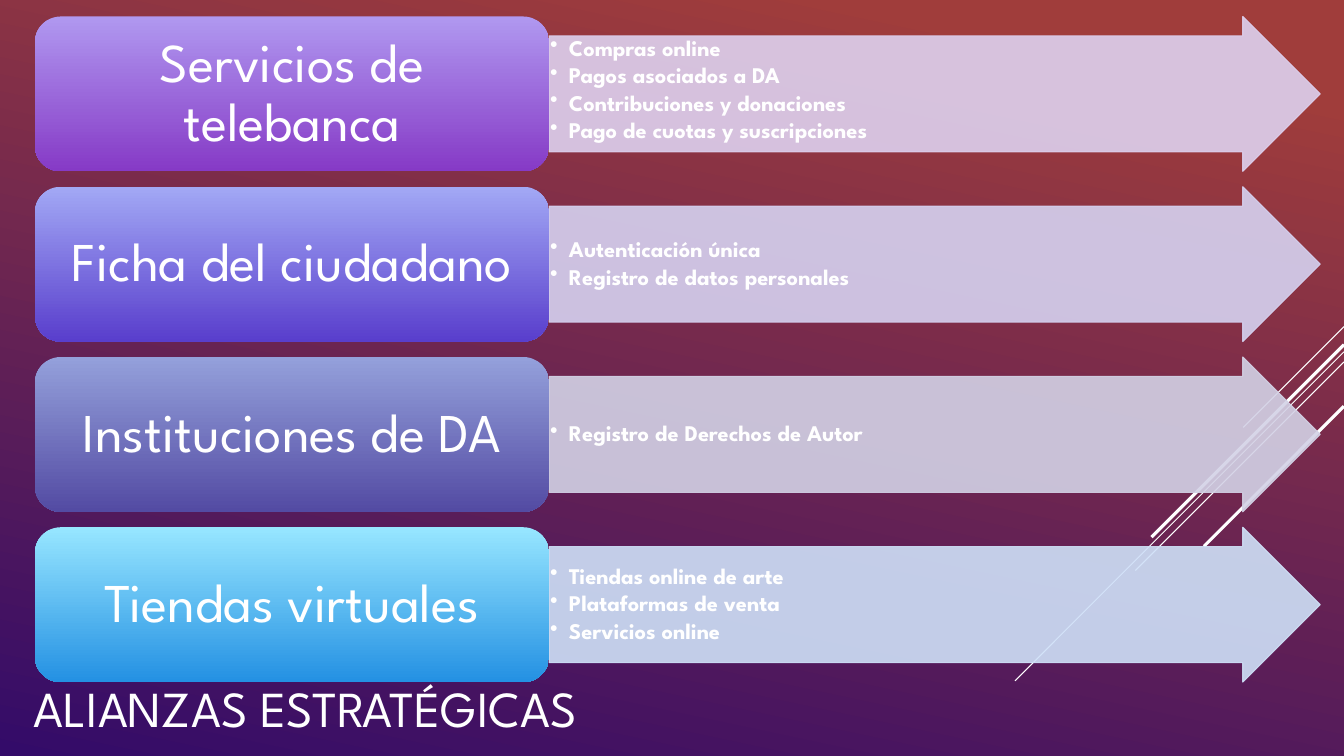
from dataclasses import dataclass

from lxml.etree import SubElement as Sub
from pptx import Presentation
from pptx.dml.color import RGBColor as Rgb
from pptx.enum.shapes import MSO_CONNECTOR as Conn, MSO_SHAPE as Kind
from pptx.enum.text import MSO_ANCHOR as Anchor, MSO_AUTO_SIZE as Fit, PP_ALIGN as Align
from pptx.oxml.ns import qn
from pptx.util import Pt


@dataclass(frozen=True)
class Theme:
    font: str = "League Spartan"
    text: str = "FFFFFF"
    back: tuple = ("A03D3B", "330B69")
    title: int = 36
    label: int = 39
    item: int = 16
    alpha: int = 90


@dataclass(frozen=True)
class Row:
    label: str
    items: tuple
    shades: tuple
    tint: str


THEME = Theme()
WIDE, HIGH = 960, 540
ROWS = (
    Row("Servicios de telebanca",
        ("Compras online", "Pagos asociados a DA", "Contribuciones y donaciones",
         "Pago de cuotas y suscripciones"),
        ("B098F0", "863AC6"), "DED1EF"),
    Row("Ficha del ciudadano",
        ("Autenticación única", "Registro de datos personales"),
        ("A2A8F5", "593ECC"), "D6D2F1"),
    Row("Instituciones de DA", ("Registro de Derechos de Autor",),
        ("94A0DB", "534BA3"), "D3D2E6"),
    Row("Tiendas virtuales",
        ("Tiendas online de arte", "Plataformas de venta", "Servicios online"),
        ("97E6FF", "2491E3"), "CFE1F8"),
)
# Start height on the right edge, run to the lower left, line width
RAYS = ((233.3, 72, 0.75), (251.3, 235, 0.75), (258.5, 149, 0.75),
        (246.2, 137.5, 2.25), (290.2, 100, 2.25))


def write(frame, *lines, size, bold=False, align=Align.LEFT, anchor=Anchor.MIDDLE,
          inset=(7.2, 3.6), lead=0.9, after=0, hang=0):
    """Fill a text frame, one paragraph per line; hang adds bullets."""
    frame.word_wrap = True
    frame.auto_size = Fit.NONE
    frame.vertical_anchor = anchor
    frame.margin_left = frame.margin_right = Pt(inset[0])
    frame.margin_top = frame.margin_bottom = Pt(inset[1])
    for i, line in enumerate(lines):
        para = frame.add_paragraph() if i else frame.paragraphs[0]
        para.alignment = align
        para.line_spacing = lead
        para.space_after = Pt(after)
        run = para.add_run()
        run.text = line
        font = run.font
        font.name, font.size, font.bold = THEME.font, Pt(size), bold
        font.color.rgb = Rgb.from_string(THEME.text)
        if hang:
            props = para._p.get_or_add_pPr()
            props.set("marL", str(Pt(hang)))
            props.set("indent", str(-Pt(hang)))
            Sub(props, qn("a:buChar"), char="•")


def shade(fill, colors, angle=270, start=0):
    fill.gradient()
    fill.gradient_angle = angle
    for stop, color, place in zip(fill.gradient_stops, colors, (start, 1)):
        stop.color.rgb = Rgb.from_string(color)
        stop.position = place


def tint(fill, color):
    """Set a solid, slightly see-through colour."""
    fill.solid()
    fill.fore_color.rgb = Rgb.from_string(color)
    node = fill._xPr.find(qn("a:solidFill"))[0]
    Sub(node, qn("a:alpha"), val=str(THEME.alpha * 1000))


def add_rays(slide, right):
    for top, run, width in RAYS:
        ray = slide.shapes.add_connector(
            Conn.STRAIGHT, Pt(right), Pt(top), Pt(right - run), Pt(top + run))
        ray.line.width = Pt(width)
        ray.line.color.rgb = Rgb.from_string(THEME.text)
        Sub(ray._element.spPr, qn("a:effectLst"))


def add_title(slide, text, left, top, width, height):
    title = slide.shapes.title
    title.left, title.top = Pt(left), Pt(top)
    title.width, title.height = Pt(width), Pt(height)
    write(title.text_frame, text, size=THEME.title)


def add_row(slide, row, left, top, width, height):
    """Place a label box on the left two fifths and its list in an arrow."""
    split = width * 0.4
    arrow = slide.shapes.add_shape(Kind.RIGHT_ARROW, Pt(left + split), Pt(top),
                                   Pt(width - split), Pt(height))
    arrow.adjustments[0], arrow.adjustments[1] = 0.75, 0.5
    arrow.shadow.inherit = False
    tint(arrow.fill, row.tint)
    arrow.line.width = Pt(0.75)
    tint(arrow.line.fill, row.tint)
    write(arrow.text_frame, *row.items, size=THEME.item, bold=True,
          anchor=Anchor.TOP if len(row.items) > 3 else Anchor.MIDDLE,
          inset=(0.75, 0.75), after=2.4, hang=13.5)

    box = slide.shapes.add_shape(Kind.ROUNDED_RECTANGLE, Pt(left), Pt(top),
                                 Pt(split), Pt(height))
    box.shadow.inherit = False
    shade(box.fill, row.shades)
    box.line.fill.background()
    write(box.text_frame, row.label, size=THEME.label, align=Align.CENTER,
          inset=(11.5, 5.8))


def add_rows(slide, left, top, width, height, gap):
    tall = (height - gap * (len(ROWS) - 1)) / len(ROWS)
    for i, row in enumerate(ROWS):
        add_row(slide, row, left, top + i * (tall + gap), width, tall)


def main():
    deck = Presentation()
    deck.slide_width, deck.slide_height = Pt(WIDE), Pt(HIGH)
    slide = deck.slides.add_slide(deck.slide_layouts[5])
    shade(slide.background.fill, THEME.back, angle=258, start=0.1)
    add_rays(slide, WIDE)
    add_title(slide, "ALIANZAS ESTRATÉGICAS", 16.8, 480, 672, 55.5)
    add_rows(slide, 25, 11.8, 918, 475.4, 11)
    deck.save("out.pptx")


if __name__ == "__main__":
    main()
